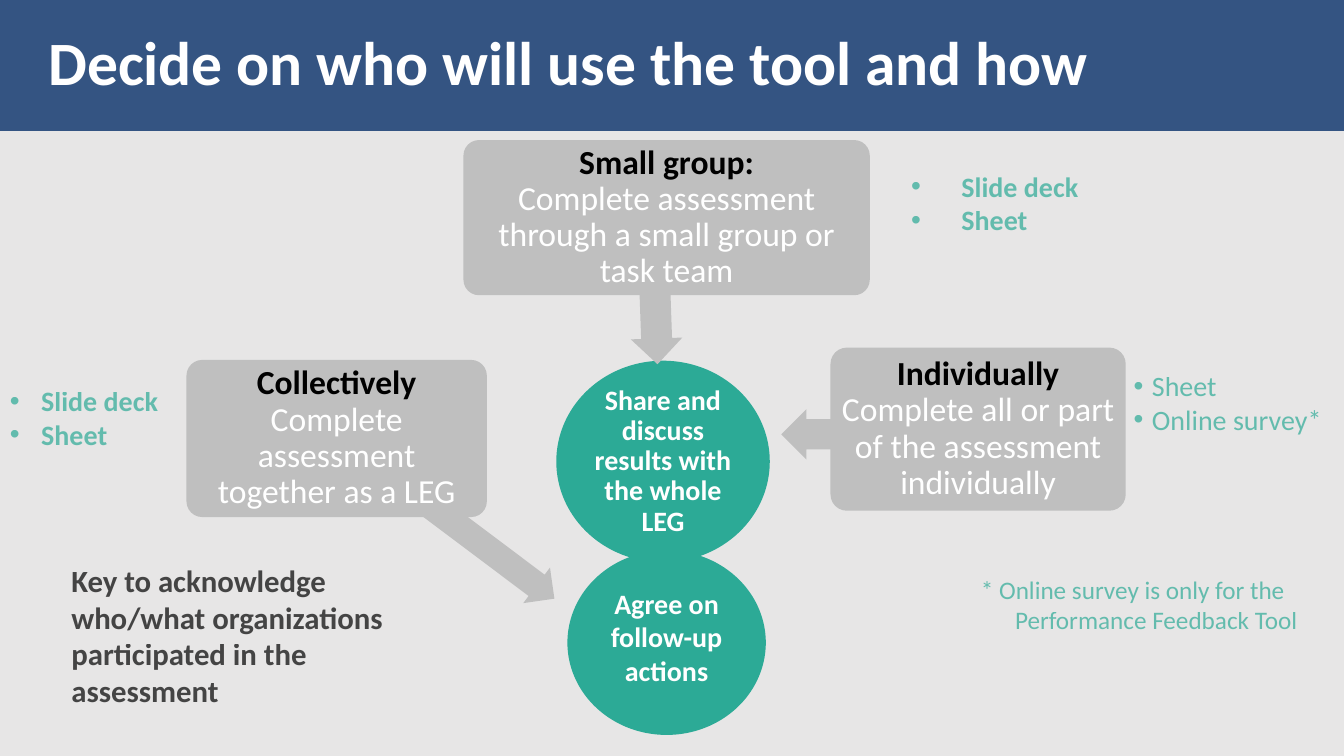
from dataclasses import dataclass

import pptx
import pptx.dml.color
import pptx.enum.shapes
import pptx.enum.text
import pptx.oxml.ns
import pptx.util
from lxml import etree

Cm = pptx.util.Cm
Pt = pptx.util.Pt
SHAPE = pptx.enum.shapes.MSO_SHAPE
ALIGN = pptx.enum.text.PP_ALIGN
ANCHOR = pptx.enum.text.MSO_ANCHOR

COLORS = {
    "background": "E7E6E6",
    "banner": "345482",
    "gray": "BFBFBF",
    "teal": "2CAA96",
    "white": "FFFFFF",
    "black": "000000",
}
FONT = "Calibri"


@dataclass
class Area:
    left: float
    top: float
    width: float
    height: float


@dataclass
class Words:
    text: str
    size: float
    color: str
    bold: bool = False
    opacity: int = 100


@dataclass
class Arrow:
    area: Area
    rotation: float = 0


@dataclass
class Approach:
    area: Area
    paragraphs: list[list[Words]]


@dataclass
class Note:
    area: Area
    lines: list[str]
    size: float
    color: str
    bold: bool
    margins: list[float]
    bulleted: bool = False
    hanging: float = 0


def add_filled(page, kind, area: Area, color: str):
    shape = page.shapes.add_shape(
        kind, Cm(area.left), Cm(area.top), Cm(area.width), Cm(area.height))
    shape.shadow.inherit = False
    shape.fill.solid()
    shape.fill.fore_color.rgb = pptx.dml.color.RGBColor.from_string(COLORS[color])
    shape.line.fill.background()
    return shape


def set_insets(frame, inset: float) -> None:
    frame.margin_left = frame.margin_right = Cm(inset)
    frame.margin_top = frame.margin_bottom = Cm(inset)


def add_words(para, words: Words) -> None:
    span = para.add_run()
    span.text = words.text
    span.font.name = FONT
    span.font.size = Pt(words.size)
    span.font.bold = words.bold
    span.font.fill.solid()
    span.font.fill.fore_color.rgb = pptx.dml.color.RGBColor.from_string(COLORS[words.color])
    if words.opacity < 100:
        tint = span.font.fill.fore_color
        color = span._r.find(".//" + pptx.oxml.ns.qn("a:srgbClr"))
        etree.SubElement(color, pptx.oxml.ns.qn("a:alpha"), val=str(words.opacity * 1000))


def write(frame, paragraphs: list[list[Words]], align, spacing: float = 1.0) -> None:
    frame.word_wrap = True
    for index, pieces in enumerate(paragraphs):
        para = frame.add_paragraph() if index else frame.paragraphs[0]
        para.alignment = align
        para.line_spacing = spacing
        for words in pieces:
            add_words(para, words)


def indent(para, margin: float, hanging: float, bulleted: bool) -> None:
    props = para._p.get_or_add_pPr()
    props.set("marL", str(Cm(margin)))
    props.set("indent", str(-Cm(hanging)))
    if bulleted:
        etree.SubElement(props, pptx.oxml.ns.qn("a:buFont"), typeface="Arial")
        etree.SubElement(props, pptx.oxml.ns.qn("a:buChar"), char="•")


def add_note(page, note: Note) -> None:
    area = note.area
    box = page.shapes.add_textbox(
        Cm(area.left), Cm(area.top), Cm(area.width), Cm(area.height))
    lines = [[Words(line, note.size, note.color, note.bold, 70)] for line in note.lines]
    write(box.text_frame, lines, ALIGN.LEFT)
    for para, margin in zip(box.text_frame.paragraphs, note.margins):
        indent(para, margin, note.hanging, note.bulleted)


def add_circle(page, area: Area, lines: list[str], spacing: float):
    circle = add_filled(page, SHAPE.OVAL, area, "teal")
    frame = circle.text_frame
    set_insets(frame, 0.03)
    frame.vertical_anchor = ANCHOR.MIDDLE
    write(frame, [[Words(line, 20, "white", True)] for line in lines], ALIGN.CENTER, spacing)
    return circle


def heading(text: str) -> Words:
    return Words(text, 24, "black", True)


def detail(text: str) -> Words:
    return Words(text, 24, "white")


ARROWS = [
    Arrow(Area(9.58, 13.06, 4.88, 1.12), 216.9),
    Arrow(Area(13.89, 5.94, 5.18, 1.3), 268),
    Arrow(Area(19.69, 10.31, 4.85, 1.27)),
]
APPROACHES = [
    Approach(Area(4.7, 9.07, 7.57, 3.96), [
        [heading("Collectively"), detail(" Complete assessment together as a LEG")]]),
    Approach(Area(11.68, 3.53, 10.24, 3.91), [
        [heading("Small group:")],
        [detail("Complete assessment through a small group or task team")]]),
    Approach(Area(20.93, 8.76, 7.44, 4.11), [
        [heading("Individually "),
         detail("Complete all or part of the assessment individually")]]),
]
TOOLS = ["Slide deck", "Sheet"]
NOTES = [
    Note(Area(1.55, 14.02, 8.64, 4.01),
         ["Key to acknowledge who/what organizations participated in the assessment"],
         22, "black", True, [0]),
    Note(Area(0, 9.55, 6.2, 1.96), TOOLS, 20, "teal", True, [0.79, 0.79], True, 0.79),
    Note(Area(22.71, 4.14, 10.19, 1.96), TOOLS, 20, "teal", True, [1.27, 1.27], True, 1.27),
    Note(Area(28.32, 9.17, 5.54, 1.96), ["Sheet", "Online survey*"],
         20, "teal", False, [0.46, 0.46], True, 0.46),
    Note(Area(24.33, 14.35, 8.99, 1.8),
         ["* Online survey is only for the", "Performance Feedback Tool"],
         18, "teal", False, [0.14, 1.0]),
]


def main() -> None:
    deck = pptx.Presentation()
    deck.slide_width, deck.slide_height = Cm(33.87), Cm(19.05)
    page = deck.slides.add_slide(deck.slide_layouts[6])
    page.background.fill.solid()
    page.background.fill.fore_color.rgb = pptx.dml.color.RGBColor.from_string(
        COLORS["background"])

    # Title banner
    banner = add_filled(page, SHAPE.RECTANGLE, Area(0, 0, 33.87, 3.3), "banner")
    banner.text_frame.vertical_anchor = ANCHOR.MIDDLE
    banner.text_frame.margin_left = Cm(1.22)
    write(banner.text_frame,
          [[Words("Decide on who will use the tool and how", 44, "white", True)]],
          ALIGN.LEFT, 0.9)

    # Shared discussion, with the three approaches leading to it
    add_circle(page, Area(14.02, 9.09, 5.38, 5.08),
               ["Share and discuss results with the whole LEG"], 0.9)
    for arrow in ARROWS:
        shape = add_filled(page, SHAPE.LEFT_ARROW, arrow.area, "gray")
        shape.adjustments[0] = 0.6
        shape.adjustments[1] = 0.5
        shape.rotation = arrow.rotation
    for approach in APPROACHES:
        card = add_filled(page, SHAPE.ROUNDED_RECTANGLE, approach.area, "gray")
        card.adjustments[0] = 0.1
        set_insets(card.text_frame, 0.13)
        card.text_frame.vertical_anchor = ANCHOR.MIDDLE
        write(card.text_frame, approach.paragraphs, ALIGN.CENTER, 0.9)

    # Follow-up
    follow_up = add_circle(page, Area(14.3, 13.87, 5.0, 4.65),
                           ["Agree on", "follow-up", "actions"], 1.0)
    follow_up.text_frame.margin_bottom = Cm(0.33)

    # Tool lists and remarks
    for note in NOTES:
        add_note(page, note)

    deck.save("out.pptx")


if __name__ == "__main__":
    main()
